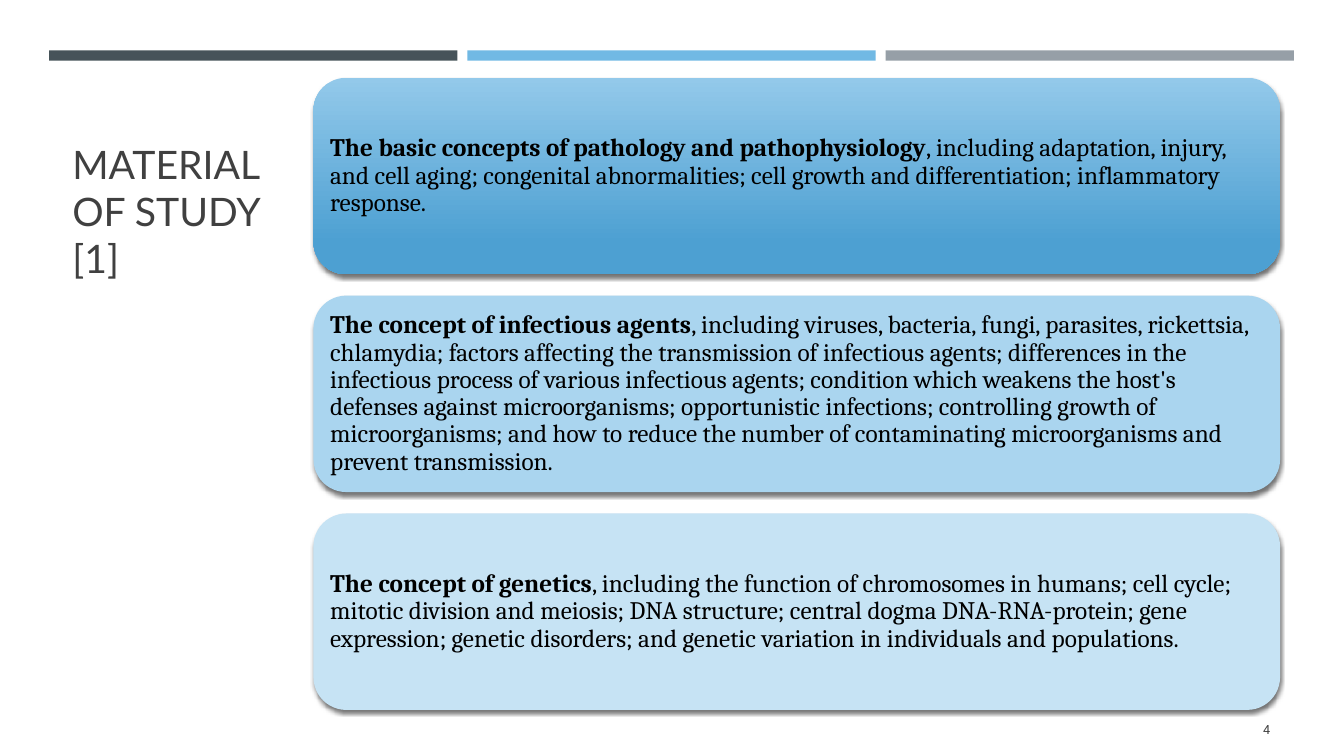
from lxml.etree import SubElement
from pptx import Presentation
from pptx.dml.color import RGBColor
from pptx.enum.shapes import MSO_SHAPE
from pptx.enum.text import MSO_ANCHOR, MSO_AUTO_SIZE, PP_ALIGN
from pptx.oxml.ns import qn
from pptx.util import Cm, Pt

COLORS = {
    "slate": "465359", "blue": "71B9E4", "gray": "969FA7",
    "light": "93C9EA", "deep": "4DA0D2", "sky": "AAD5EF", "pale": "C6E3F4",
    "ink": "404040", "black": "000000",
}
FONTS = {
    "title": {"name": "Lato", "size": Pt(28), "bold": False},
    "body": {"name": "Cambria", "size": Pt(18), "bold": False},
    "lead": {"name": "Cambria", "size": Pt(18), "bold": True},
    "number": {"name": "Roboto", "size": Pt(9), "bold": False},
}
CARDS = [
    (["light", "deep"], "The basic concepts of pathology and pathophysiology",
     ", including adaptation, injury, and cell aging; congenital abnormalities; "
     "cell growth and differentiation; inflammatory response."),
    (["sky"], "The concept of infectious agents",
     ", including viruses, bacteria, fungi, parasites, rickettsia, chlamydia; "
     "factors affecting the transmission of infectious agents; differences in the "
     "infectious process of various infectious agents; condition which weakens the "
     "host's defenses against microorganisms; opportunistic infections; controlling "
     "growth of microorganisms; and how to reduce the number of contaminating "
     "microorganisms and prevent transmission."),
    (["pale"], "The concept of genetics",
     ", including the function of chromosomes in humans; cell cycle; mitotic division "
     "and meiosis; DNA structure; central dogma DNA-RNA-protein; gene expression; "
     "genetic disorders; and genetic variation in individuals and populations."),
]


def color(name):
    return RGBColor.from_string(COLORS[name])


def apply(target, values):
    for key, value in values.items():
        setattr(target, key, value)


def add_run(para, text, style, ink):
    run = para.add_run()
    run.text = text
    apply(run.font, FONTS[style])
    run.font.color.rgb = color(ink)


def add_block(slide, kind, box, tones):
    """Add a shape without outline, filled with one tone or a vertical blend."""
    shape = slide.shapes.add_shape(kind, *map(Cm, box))
    shape.shadow.inherit = False
    if len(tones) == 1:
        shape.fill.solid()
        shape.fill.fore_color.rgb = color(tones[0])
    else:
        shape.fill.gradient()
        shape.fill.gradient_angle = 270
        for stop, tone, place in zip(shape.fill.gradient_stops, tones, (0, 0.84)):
            stop.color.rgb = color(tone)
            stop.position = place
    shape.line.fill.background()
    return shape


def add_shadow(shape):
    effects = shape._element.spPr.find(qn("a:effectLst"))
    shadow = SubElement(effects, qn("a:outerShdw"), blurRad=str(Pt(3)),
                        dist=str(Pt(2)), dir="5400000", rotWithShape="0")
    tint = SubElement(shadow, qn("a:srgbClr"), val=COLORS["black"])
    SubElement(tint, qn("a:alpha"), val="55000")


def add_card(slide, top, tones, lead, rest):
    card = add_block(slide, MSO_SHAPE.ROUNDED_RECTANGLE, (7.9, top, 24.36, 4.95), tones)
    add_shadow(card)
    frame = card.text_frame
    sides = ("left", "top", "right", "bottom")
    apply(frame, {f"margin_{side}": Cm(0.18) for side in sides})
    apply(frame, {"word_wrap": True, "vertical_anchor": MSO_ANCHOR.MIDDLE})
    para = frame.paragraphs[0]
    apply(para, {"alignment": PP_ALIGN.LEFT, "line_spacing": 0.9})
    add_run(para, lead, "lead", "black")
    add_run(para, rest, "body", "black")


def set_title(slide, text):
    title = slide.shapes.title
    apply(title, {"left": Cm(1.57), "top": Cm(3.4), "width": Cm(5.56), "height": Cm(3.81)})
    frame = title.text_frame
    apply(frame, {"word_wrap": True, "auto_size": MSO_AUTO_SIZE.NONE,
                  "vertical_anchor": MSO_ANCHOR.BOTTOM})
    para = frame.paragraphs[0]
    para.alignment = PP_ALIGN.LEFT
    add_run(para, text, "title", "ink")


def add_number(slide, text):
    frame = slide.shapes.add_textbox(Cm(29.34), Cm(17.86), Cm(2.92), Cm(1.02)).text_frame
    apply(frame, {"word_wrap": True, "vertical_anchor": MSO_ANCHOR.MIDDLE})
    para = frame.paragraphs[0]
    para.alignment = PP_ALIGN.RIGHT
    add_run(para, text, "number", "ink")


def main():
    deck = Presentation()
    apply(deck, {"slide_width": Cm(33.87), "slide_height": Cm(19.05)})
    slide = deck.slides.add_slide(deck.slide_layouts[5])
    for i, tone in enumerate(("slate", "blue", "gray")):
        add_block(slide, MSO_SHAPE.RECTANGLE, (1.24 + i * 10.54, 1.27, 10.29, 0.26), [tone])
    set_title(slide, "MATERIAL OF STUDY [1]")
    for i, card in enumerate(CARDS):
        add_card(slide, 1.96 + i * 5.49, *card)
    add_number(slide, "4")
    deck.save("out.pptx")


if __name__ == "__main__":
    main()
